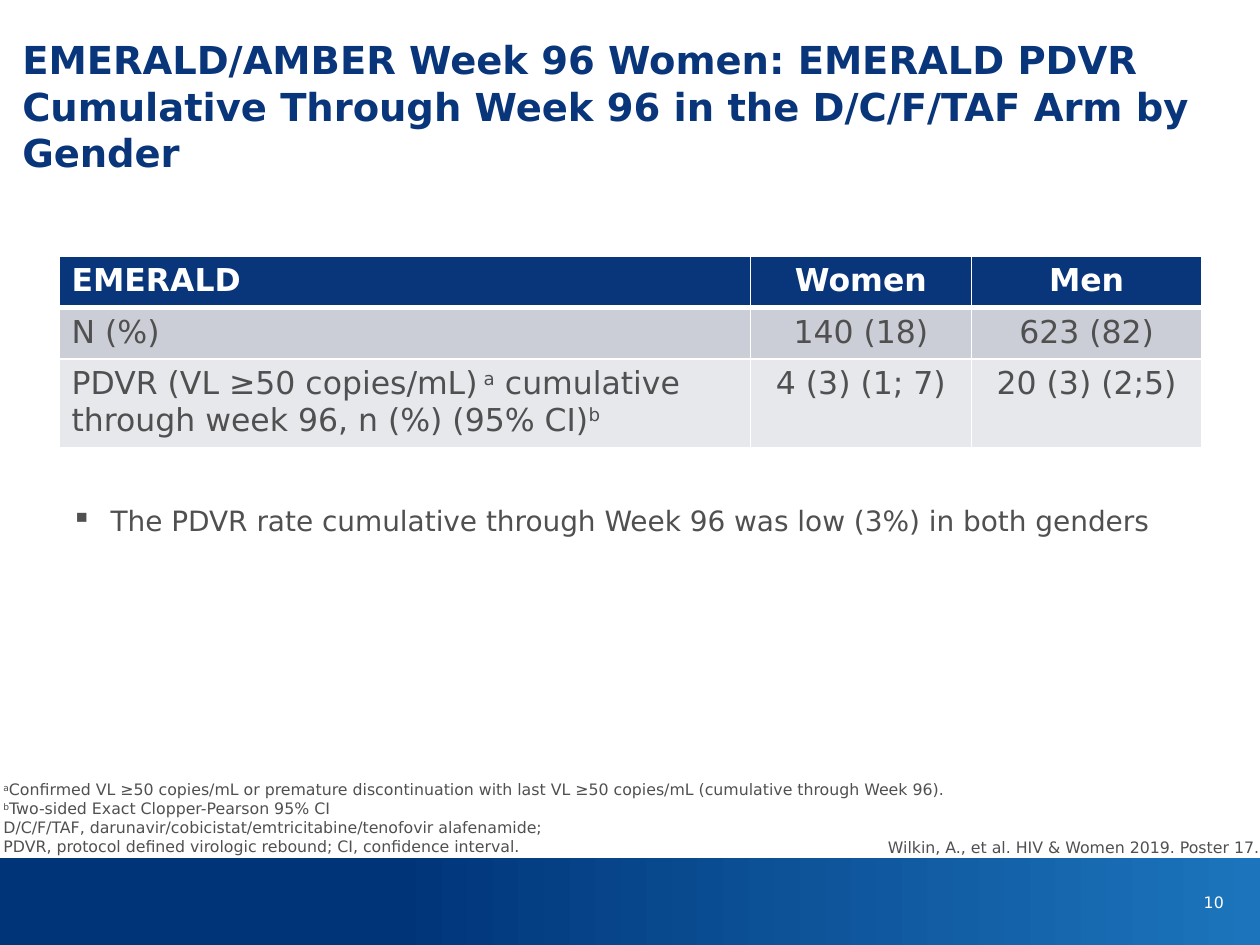
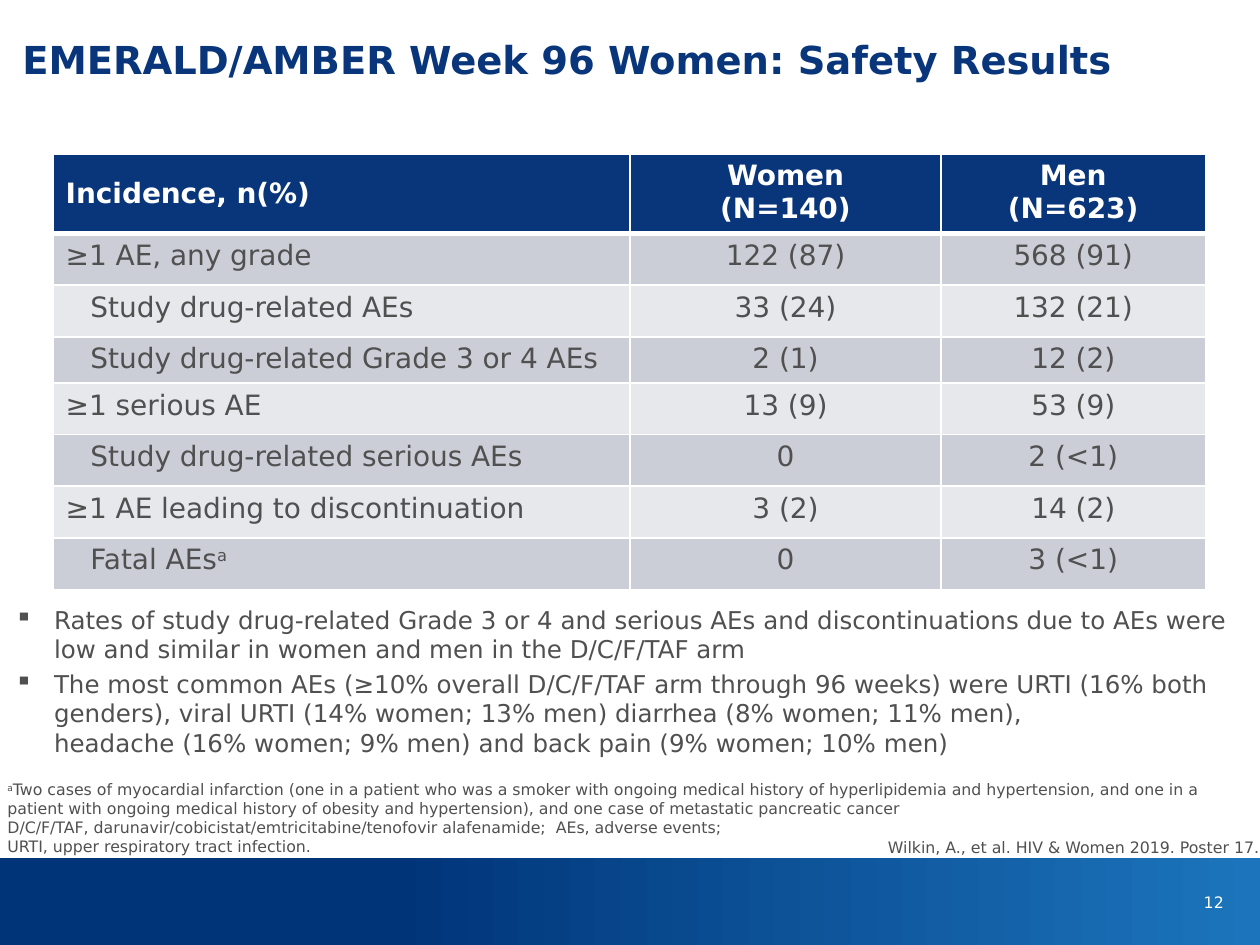
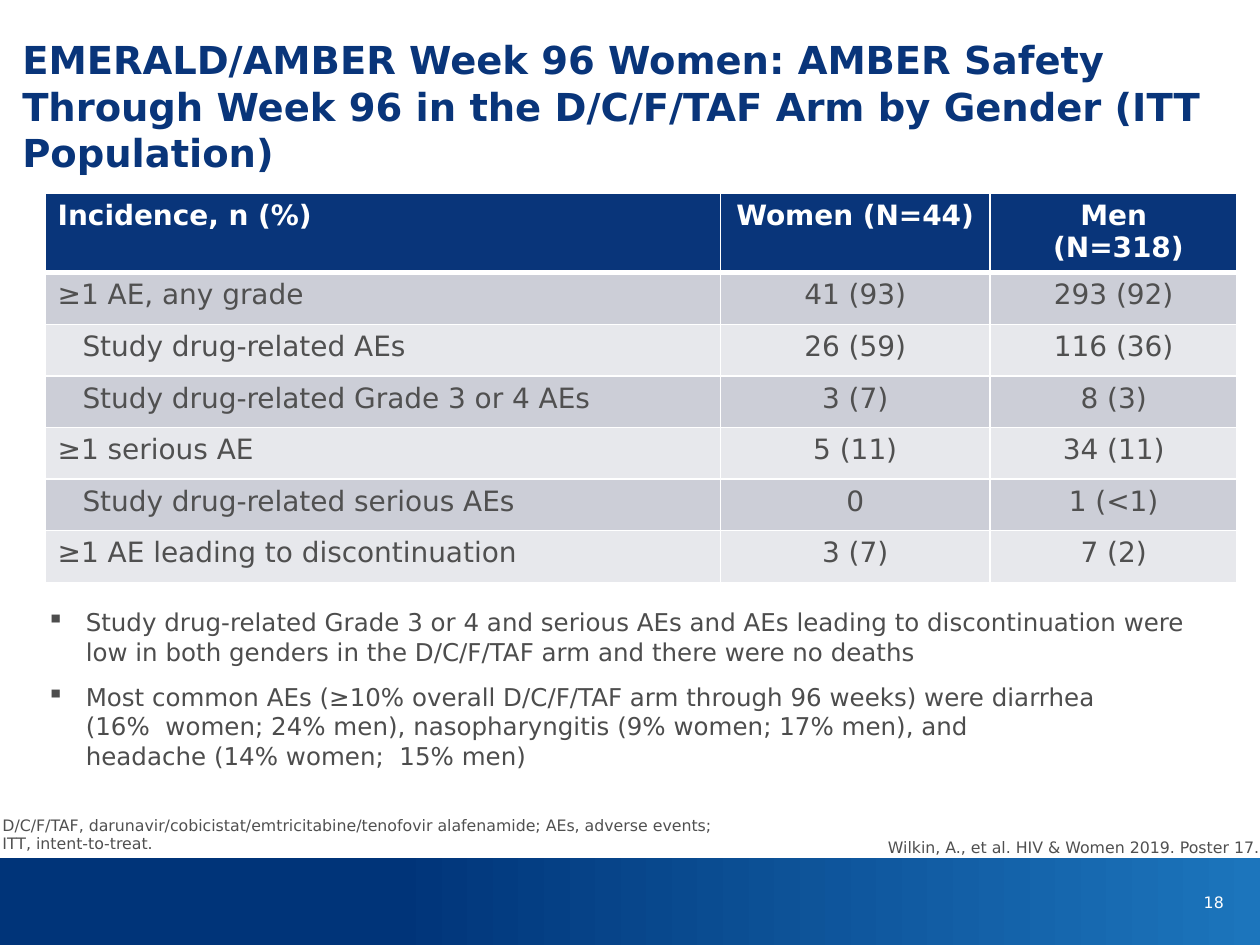
import copy

import lxml.etree
import pptx
import pptx.dml.color
import pptx.enum.shapes
import pptx.enum.text
import pptx.oxml.ns
import pptx.util

Cm, Pt = pptx.util.Cm, pptx.util.Pt
ALIGN, ANCHOR = pptx.enum.text.PP_ALIGN, pptx.enum.text.MSO_ANCHOR
qn = pptx.oxml.ns.qn

# Shared style
FONT = "DejaVu Sans"
NAVY, GREY, DARK_GREY, WHITE = "09357A", "505050", "4D4D4D", "FFFFFF"
BAND_FROM, BAND_TO = "003479", "1C75BC"
ROW_FILLS = ("CCCED7", "E7E8EC")
CITATION = "Wilkin, A., et al. HIV & Women 2019. Poster 17."
STUDY = "EMERALD/AMBER Week 96 Women: "
ROW, TALL_HEADER = 1.04, 1.6
SUB = "> "  # marks an indented table label


def rgb(value):
    return pptx.dml.color.RGBColor.from_string(value)


# Text
def write(tf, lines, size, color, bold=False, align=ALIGN.LEFT, bullet=False, after=0):
    """Fill a text frame; ^x^ is superscript and \\v a line break."""
    for i, line in enumerate(lines):
        p = tf.paragraphs[0] if i == 0 else tf.add_paragraph()
        p.alignment = align
        if bullet:
            add_bullet(p)
        if after:
            p.space_after = Pt(after)
        if "^" in line:
            add_superscripts(p, line)
        else:
            p.text = line
        for r in p.runs:
            r.font.name, r.font.size, r.font.bold = FONT, Pt(size), bold
            r.font.color.rgb = rgb(color)
        for br in p._p.findall(qn("a:br")):
            br.append(copy.deepcopy(p.runs[0]._r.rPr))


def add_superscripts(p, line):
    for i, part in enumerate(line.split("^")):
        if part:
            r = p.add_run()
            r.text = part
            if i % 2:
                r.font._element.set("baseline", "30000")


def add_bullet(p):
    pPr = p._p.get_or_add_pPr()
    pPr.set("marL", str(Cm(0.79)))
    pPr.set("indent", str(-Cm(0.79)))
    lxml.etree.SubElement(pPr, qn("a:buChar")).set("char", "▪")


def add_text(s, box, lines, size, color=GREY, anchor=ANCHOR.TOP, **style):
    tf = s.shapes.add_textbox(*(Cm(v) for v in box)).text_frame
    tf.word_wrap = True
    tf.vertical_anchor = anchor
    write(tf, lines, size, color, **style)


# Tables
def set_borders(cell, top, bottom):
    tcPr = cell._tc.get_or_add_tcPr()
    for side, width in (("L", 1), ("R", 1), ("T", top), ("B", bottom)):
        ln = lxml.etree.SubElement(tcPr, qn("a:ln" + side), w=str(Pt(width)))
        fill = lxml.etree.SubElement(ln, qn("a:solidFill"))
        lxml.etree.SubElement(fill, qn("a:srgbClr"), val=WHITE)


def add_results(s, left, top, widths, heights, rows, size, label_anchor=ANCHOR.TOP):
    frame = s.shapes.add_table(len(rows), len(widths), Cm(left), Cm(top),
                               Cm(sum(widths)), Cm(sum(heights)))
    table = frame.table
    for col, width in zip(table.columns, widths):
        col.width = Cm(width)
    for i, (values, height) in enumerate(zip(rows, heights)):
        table.rows[i].height = Cm(height)
        header = i == 0
        for j, value in enumerate(values):
            cell = table.cell(i, j)
            set_borders(cell, 3 if i == 1 else 1, 3 if header else 1)
            cell.fill.solid()
            cell.fill.fore_color.rgb = rgb(NAVY if header else ROW_FILLS[(i - 1) % 2])
            write(cell.text_frame, value.removeprefix(SUB).split("\n"), size,
                  WHITE if header else GREY, bold=header,
                  align=ALIGN.CENTER if j else ALIGN.LEFT)
            if value.startswith(SUB):
                cell.text_frame.paragraphs[0]._p.get_or_add_pPr().set("marL", str(Cm(0.5)))
    table.cell(0, 0).vertical_anchor = label_anchor


# Slide frame: band, page number, citation, title
def add_slide(prs, number, title):
    s = prs.slides.add_slide(prs.slide_layouts[6])
    band = s.shapes.add_shape(pptx.enum.shapes.MSO_SHAPE.RECTANGLE,
                              Cm(0), Cm(17.3), prs.slide_width, Cm(1.8))
    band.shadow.inherit = False
    band.line.fill.background()
    band.fill.gradient()
    band.fill.gradient_angle = 0
    stops = zip(band.fill.gradient_stops, (0.31, 1), (BAND_FROM, BAND_TO))
    for stop, position, color in stops:
        stop.position = position
        stop.color.rgb = rgb(color)
    add_text(s, (23.85, 17.86, 1.07, 0.64), [str(number)], 9, WHITE,
             ANCHOR.MIDDLE, align=ALIGN.RIGHT)
    add_text(s, (16.99, 16.76, 8.64, 0.64), [CITATION], 9, align=ALIGN.RIGHT)
    add_text(s, (0.2, 0.61, 24.74, 1.98), [STUDY + title], 22, NAVY, bold=True)
    return s


def add_rebound_slide(prs):
    s = add_slide(prs, 10, "EMERALD PDVR Cumulative Through Week 96 "
                           "in the D/C/F/TAF Arm by Gender")
    add_text(s, (-0.18, 15.6, 24.74, 1.8), [
        "^a^Confirmed VL ≥50 copies/mL or premature discontinuation with last VL "
        "≥50 copies/mL (cumulative through Week 96).",
        "^b^Two-sided Exact Clopper-Pearson 95% CI",
        "D/C/F/TAF, darunavir/cobicistat/emtricitabine/tenofovir alafenamide;",
        "PDVR, protocol defined virologic rebound; CI, confidence interval."], 9)
    add_text(s, (1.19, 10.03, 22.63, 0.94), [
        "The PDVR rate cumulative through Week 96 was low (3%) in both genders"],
        16, bullet=True)
    add_results(s, 1.19, 5.16, (13.94, 4.45, 4.65), (ROW, ROW, 1.78), [
        ("EMERALD", "Women", "Men"),
        ("N (%)", "140 (18)", "623 (82)"),
        ("PDVR (VL ≥50 copies/mL)^ a^ cumulative through week 96, n (%) (95% CI)^b^",
         "4 (3) (1; 7)", "20 (3) (2;5)")], 18)


def add_emerald_safety_slide(prs):
    s = add_slide(prs, 12, "Safety Results")
    add_text(s, (-0.1, 15.6, 25.58, 1.8), [
        "^a^Two cases of myocardial infarction (one in a patient who was a smoker with "
        "ongoing medical history of hyperlipidemia and hypertension, and one in a patient "
        "with ongoing medical history of obesity and hypertension), and one case of "
        "metastatic pancreatic cancer",
        "D/C/F/TAF, darunavir/cobicistat/emtricitabine/tenofovir alafenamide;  "
        "AEs, adverse events;",
        "URTI, upper respiratory tract infection."], 9)
    add_text(s, (0.05, 12.07, 25.45, 3.35), [
        "Rates of study drug-related Grade 3 or 4 and serious AEs and discontinuations due "
        "to AEs were low and similar in women and men in the D/C/F/TAF arm",
        "The most common AEs (≥10% overall D/C/F/TAF arm through 96 weeks) were URTI (16% "
        "both genders), viral URTI (14% women; 13% men) diarrhea (8% women; 11% men),\v"
        "headache (16% women; 9% men) and back pain (9% women; 10% men)"],
        14, bullet=True, after=3)
    heights = [TALL_HEADER, ROW, ROW, 0.93] + [ROW] * 4
    add_results(s, 1.07, 3.1, (11.63, 6.27, 5.33), heights, [
        ("Incidence, n(%)", "Women\n(N=140)", "Men\n(N=623)"),
        ("≥1 AE, any grade", "122 (87)", "568 (91)"),
        (SUB + "Study drug-related AEs", "33 (24)", "132 (21)"),
        (SUB + "Study drug-related Grade 3 or 4 AEs", "2 (1)", "12 (2)"),
        ("≥1 serious AE", "13 (9)", "53 (9)"),
        (SUB + "Study drug-related serious AEs", "0", "2 (<1)"),
        ("≥1 AE leading to discontinuation", "3 (2)", "14 (2)"),
        (SUB + "Fatal AEs^a^", "0", "3 (<1)")], 16, ANCHOR.MIDDLE)


def add_amber_safety_slide(prs):
    s = add_slide(prs, 18, "AMBER Safety Through Week 96 in the D/C/F/TAF Arm "
                           "by Gender (ITT Population)")
    add_text(s, (-0.2, 16.31, 16.56, 1.02), [
        "D/C/F/TAF, darunavir/cobicistat/emtricitabine/tenofovir alafenamide; "
        "AEs, adverse events;",
        "ITT, intent-to-treat."], 9)
    add_results(s, 0.91, 3.89, (13.61, 5.44, 4.98), [TALL_HEADER] + [ROW] * 6, [
        ("Incidence, n (%)", "Women (N=44)", "Men\n (N=318)"),
        ("≥1 AE, any grade", "41 (93)", "293 (92)"),
        (SUB + "Study drug-related AEs", "26 (59)", "116 (36)"),
        (SUB + "Study drug-related Grade 3 or 4 AEs", "3 (7)", "8 (3)"),
        ("≥1 serious AE", "5 (11)", "34 (11)"),
        (SUB + "Study drug-related serious AEs", "0", "1 (<1)"),
        ("≥1 AE leading to discontinuation", "3 (7)", "7 (2)")], 16)
    add_text(s, (0.69, 12.12, 24.03, 3.58), [
        "Study drug-related Grade 3 or 4 and serious AEs and AEs leading to discontinuation "
        "were low in both genders in the D/C/F/TAF arm and there were no deaths",
        "Most common AEs (≥10% overall D/C/F/TAF arm through 96 weeks) were diarrhea\v"
        "(16%  women; 24% men), nasopharyngitis (9% women; 17% men), and\v"
        "headache (14% women;  15% men)"],
        14, DARK_GREY, bullet=True, after=9)


def main():
    prs = pptx.Presentation()
    prs.slide_width, prs.slide_height = Cm(25.4), Cm(19.05)
    add_rebound_slide(prs)
    add_emerald_safety_slide(prs)
    add_amber_safety_slide(prs)
    prs.save("out.pptx")


if __name__ == "__main__":
    main()
